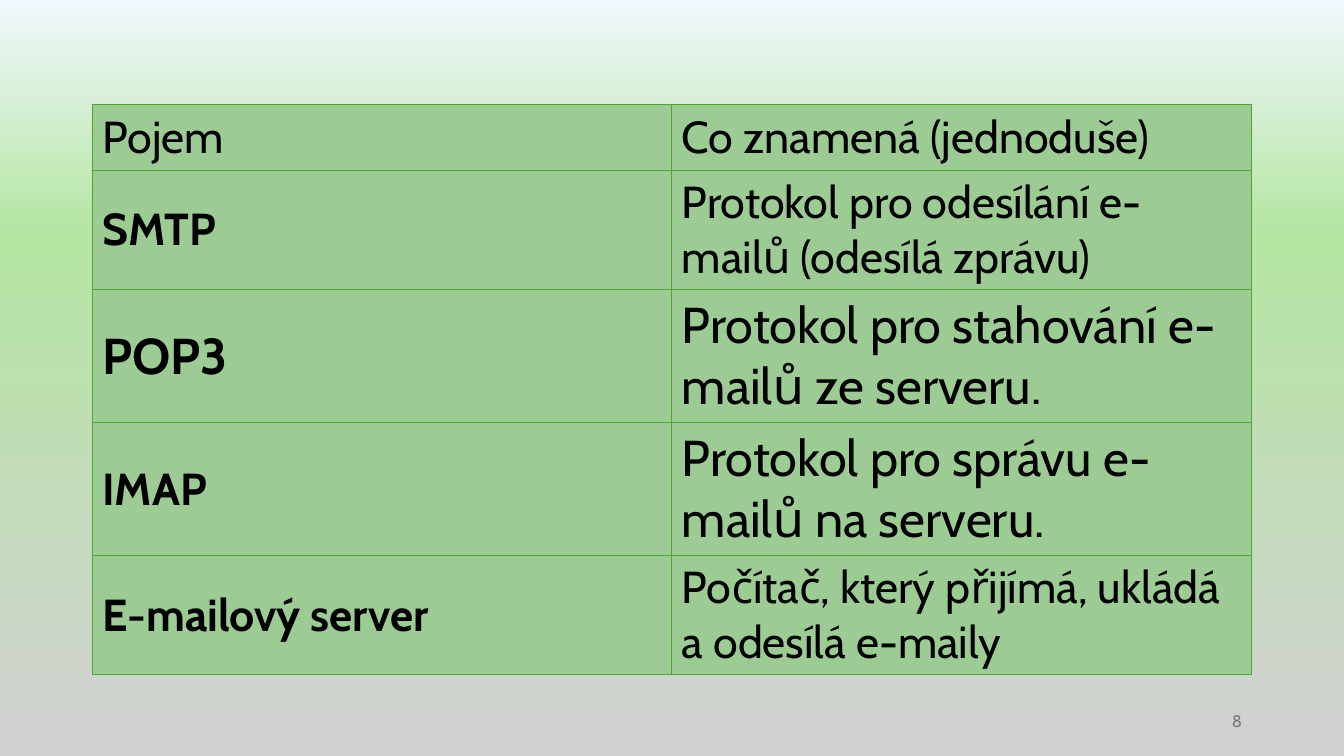
from copy import deepcopy

from lxml.etree import SubElement
from pptx import Presentation
from pptx.dml.color import RGBColor
from pptx.enum.text import MSO_ANCHOR as Anchor, PP_ALIGN as Align
from pptx.oxml.ns import qn
from pptx.util import Cm, Pt

ROWS = [
    (1.65, ("Pojem", 32), ("Co znamená (jednoduše)", 32)),
    (3.0, ("SMTP", 32), ("Protokol pro odesílání e-mailů (odesílá zprávu)", 32)),
    (3.35, ("POP3", 36), ("Protokol pro stahování e-mailů ze serveru.", 36)),
    (3.35, ("IMAP", 32), ("Protokol pro správu e-mailů na serveru.", 36)),
    (3.0, ("E-mailový server", 32), ("Počítač, který přijímá, ukládá a odesílá e-maily", 32)),
]
PAGE_NUMBER = "8"
FONT = "Cabin"
COLUMN_WIDTH = 14.6

BLACK = RGBColor(0x00, 0x00, 0x00)
GREY = RGBColor(0x79, 0x79, 0x79)
CELL_GREEN = RGBColor(0x9C, 0xCB, 0x94)
BORDER_GREEN = RGBColor(0x4E, 0xA7, 0x2E)
BACKGROUND = [
    (0, RGBColor(0xF0, 0xF8, 0xFD)),
    (0.31, RGBColor(0xB4, 0xE5, 0xA2)),
    (1, RGBColor(0xD1, 0xD1, 0xD1)),
]


def write(frame, text, size=32, color=BLACK, bold=False, align=Align.LEFT):
    frame.word_wrap = True
    para = frame.paragraphs[0]
    para.alignment = align
    span = para.add_run()
    span.text = text
    span.font.name = FONT
    span.font.size = Pt(size)
    span.font.bold = bold
    span.font.color.rgb = color


def paint_background(page):
    fill = page.background.fill
    fill.gradient()
    fill.gradient_angle = 270
    stop_list = page.element.find(".//" + qn("a:gsLst"))
    stop_list.append(deepcopy(stop_list[0]))
    for stop, (position, color) in zip(fill.gradient_stops, BACKGROUND):
        stop.position = position
        stop.color.rgb = color


def outline(cell):
    properties = cell._tc.get_or_add_tcPr()
    for index, side in enumerate(("lnL", "lnR", "lnT", "lnB")):
        line = SubElement(properties, qn("a:" + side), w=str(Pt(1)))
        fill = SubElement(line, qn("a:solidFill"))
        SubElement(fill, qn("a:srgbClr"), val=str(BORDER_GREEN))
        properties.insert(index, line)


def add_terms(page):
    height = sum(row[0] for row in ROWS)
    frame = page.shapes.add_table(
        len(ROWS), 2, Cm(2.33), Cm(2.64), Cm(2 * COLUMN_WIDTH), Cm(height))
    table = frame.table
    for column in table.columns:
        column.width = Cm(COLUMN_WIDTH)
    for row_index, (row_height, *entries) in enumerate(ROWS):
        table.rows[row_index].height = Cm(row_height)
        for column_index, (text, size) in enumerate(entries):
            cell = table.cell(row_index, column_index)
            cell.vertical_anchor = Anchor.MIDDLE
            cell.fill.solid()
            cell.fill.fore_color.rgb = CELL_GREEN
            outline(cell)
            is_term = row_index > 0 and column_index == 0
            write(cell.text_frame, text, size=size, bold=is_term)


def add_page_number(page):
    box = page.shapes.add_textbox(Cm(23.93), Cm(17.65), Cm(7.62), Cm(1.02))
    box.text_frame.vertical_anchor = Anchor.MIDDLE
    write(box.text_frame, PAGE_NUMBER, size=12, color=GREY, align=Align.RIGHT)


def main():
    deck = Presentation()
    deck.slide_width = Cm(33.87)
    deck.slide_height = Cm(19.05)
    page = deck.slides.add_slide(deck.slide_layouts[6])
    paint_background(page)
    add_terms(page)
    add_page_number(page)
    deck.save("out.pptx")


if __name__ == "__main__":
    main()
